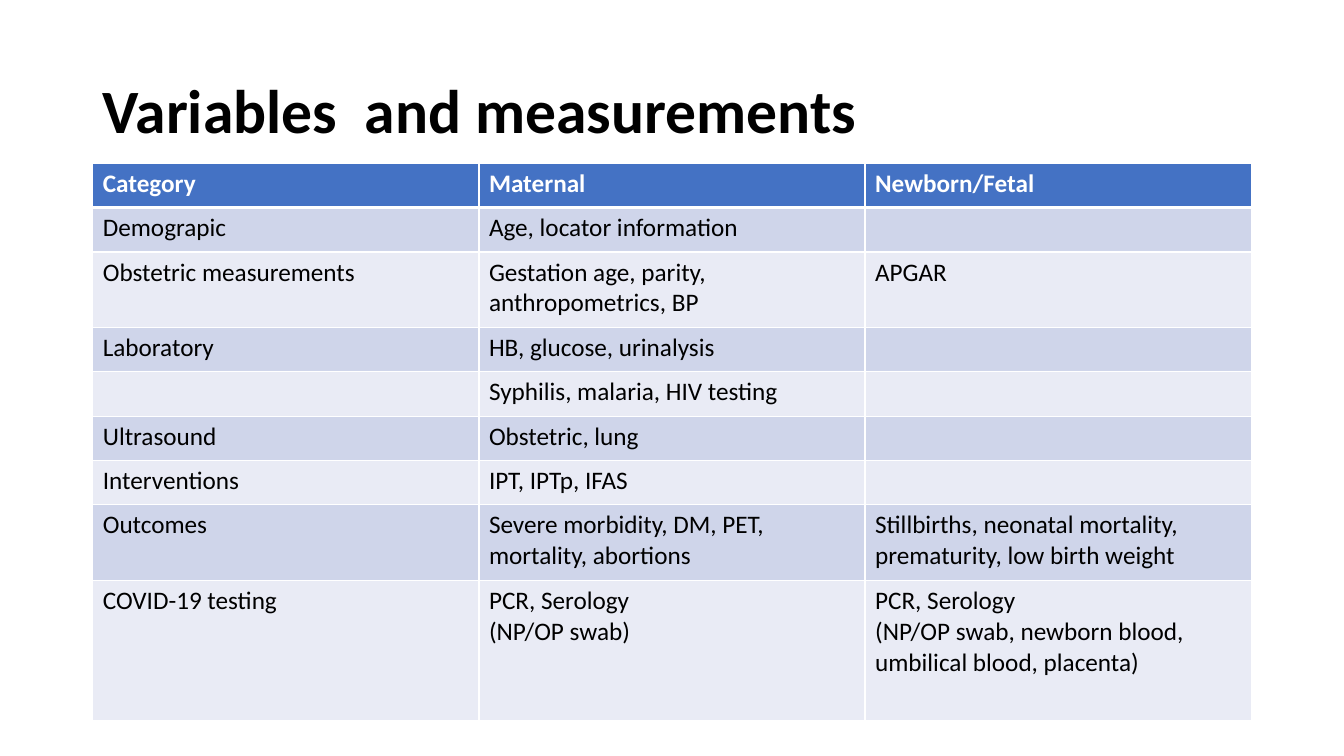
from lxml import etree
from pptx import Presentation
from pptx import util as u
from pptx.dml.color import RGBColor
from pptx.enum import text
from pptx.oxml import ns

WIDTH, HEIGHT = 13.33, 7.5
MARGIN = 0.92
CONTENT_WIDTH = WIDTH - 2 * MARGIN
TITLE_TOP, TITLE_HEIGHT = 0.4, 1.45
TABLE_TOP = 1.62
ONE_LINE, TWO_LINES, TESTING_HEIGHT = 0.44, 0.75, 1.39
FONT = "Calibri"
BLACK, WHITE = "000000", "FFFFFF"
HEADER_FILL = "4472C4"
BAND_FILLS = ("E9EBF5", "CFD5EA")

VARIABLES = [
    (ONE_LINE, "Category", "Maternal", "Newborn/Fetal"),
    (ONE_LINE, "Demograpic", "Age, locator information", ""),
    (TWO_LINES, "Obstetric measurements",
     "Gestation age, parity, anthropometrics, BP", "APGAR"),
    (ONE_LINE, "Laboratory", "HB, glucose, urinalysis", ""),
    (ONE_LINE, "", "Syphilis, malaria, HIV testing", ""),
    (ONE_LINE, "Ultrasound", "Obstetric, lung", ""),
    (ONE_LINE, "Interventions", "IPT, IPTp, IFAS", ""),
    (TWO_LINES, "Outcomes", "Severe morbidity, DM, PET, mortality, abortions",
     "Stillbirths, neonatal mortality, prematurity, low birth weight"),
    (TESTING_HEIGHT, "COVID-19 testing", "PCR, Serology\n(NP/OP swab)",
     "PCR, Serology\n(NP/OP swab, newborn blood, umbilical blood, placenta)"),
]


def color(value):
    return RGBColor.from_string(value)


def add_run(paragraph, wording, size, value, bold):
    run = paragraph.add_run()
    run.text = wording
    run.font.name = FONT
    run.font.size = u.Pt(size)
    run.font.bold = bold
    run.font.color.rgb = color(value)


def add_title(slide, wording):
    title = slide.shapes.add_textbox(
        u.Inches(MARGIN), u.Inches(TITLE_TOP),
        u.Inches(CONTENT_WIDTH), u.Inches(TITLE_HEIGHT))
    frame = title.text_frame
    frame.word_wrap = True
    frame.vertical_anchor = text.MSO_ANCHOR.MIDDLE
    frame.paragraphs[0].line_spacing = 0.9
    add_run(frame.paragraphs[0], wording, 44, BLACK, True)


def set_border(cell, side, points):
    properties = cell._tc.get_or_add_tcPr()
    border = etree.SubElement(properties, ns.qn(f"a:ln{side}"), w=str(u.Pt(points)))
    fill = etree.SubElement(border, ns.qn("a:solidFill"))
    etree.SubElement(fill, ns.qn("a:srgbClr"), val=WHITE)


def fill_cell(cell, wording, row):
    header = row == 0
    widths = {"L": 1, "R": 1, "T": 3 if row == 1 else 1, "B": 3 if header else 1}
    for side, points in widths.items():
        set_border(cell, side, points)
    cell.fill.solid()
    cell.fill.fore_color.rgb = color(HEADER_FILL if header else BAND_FILLS[row % 2])
    frame = cell.text_frame
    for index, line in enumerate(wording.split("\n") if wording else []):
        paragraph = frame.add_paragraph() if index else frame.paragraphs[0]
        add_run(paragraph, line, 18, WHITE if header else BLACK, header)


def add_variables(slide, variables):
    column_count = len(variables[0]) - 1
    table = slide.shapes.add_table(
        len(variables), column_count, u.Inches(MARGIN), u.Inches(TABLE_TOP),
        u.Inches(CONTENT_WIDTH), u.Inches(sum(height for height, *_ in variables))).table
    for column in table.columns:
        column.width = u.Inches(CONTENT_WIDTH / column_count)
    for row, (height, *wordings) in enumerate(variables):
        table.rows[row].height = u.Inches(height)
        for column, wording in enumerate(wordings):
            fill_cell(table.cell(row, column), wording, row)


def main():
    deck = Presentation()
    deck.slide_width = u.Inches(WIDTH)
    deck.slide_height = u.Inches(HEIGHT)
    slide = deck.slides.add_slide(deck.slide_layouts[6])
    add_title(slide, "Variables  and measurements")
    add_variables(slide, VARIABLES)
    deck.save("out.pptx")


if __name__ == "__main__":
    main()
